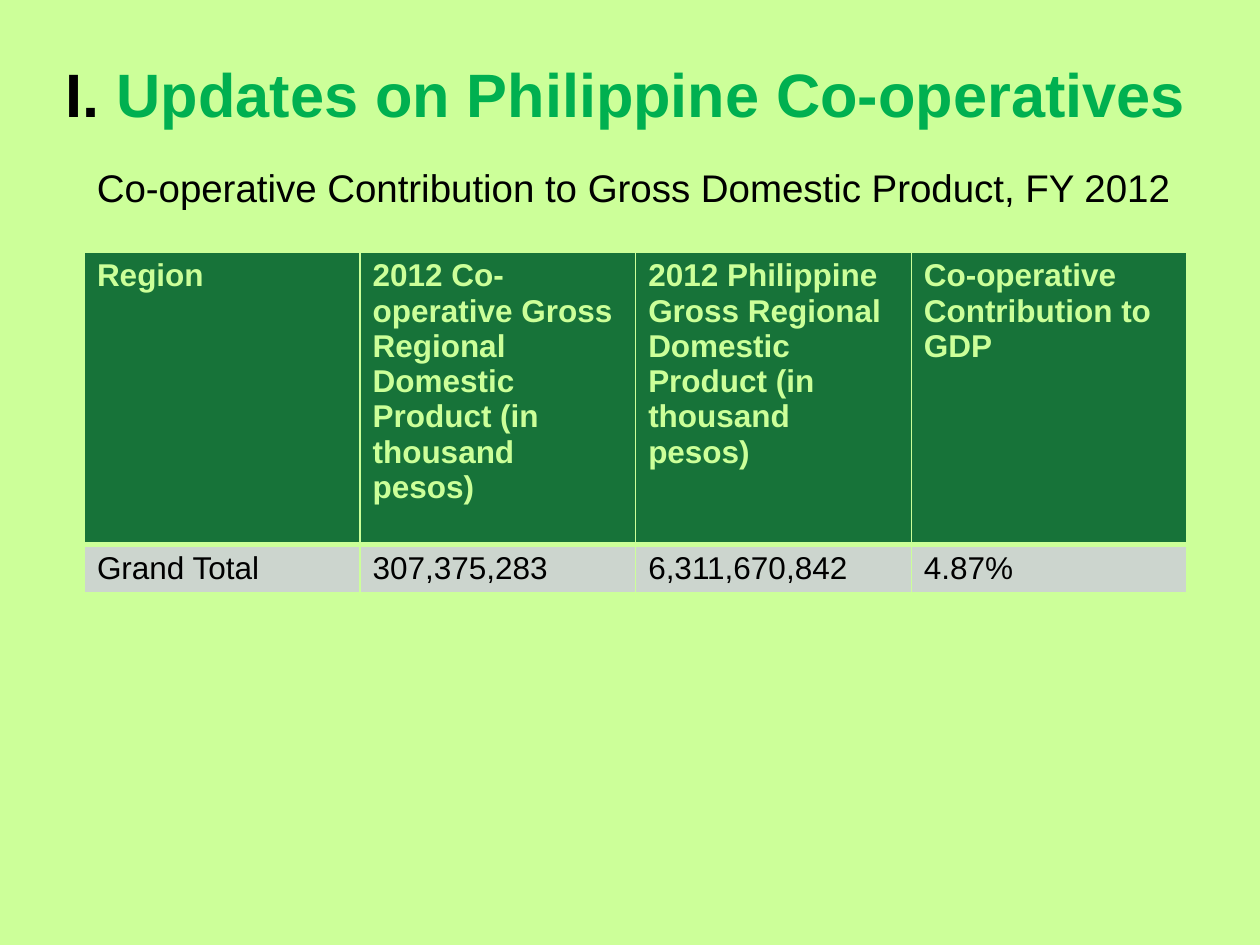
from dataclasses import dataclass

from lxml.etree import SubElement
from pptx import Presentation
from pptx.dml.color import RGBColor as Rgb
from pptx.enum.text import MSO_ANCHOR as Anchor, MSO_AUTO_SIZE as Fit, PP_ALIGN as Align
from pptx.oxml.ns import qn
from pptx.util import Inches, Pt


@dataclass(frozen=True)
class Theme:
    font: str = "Arial"
    paper: str = "CCFF99"
    ink: str = "000000"
    accent: str = "00B050"
    header: str = "177339"
    band: str = "CCD5CE"
    title_size: int = 35
    subtitle_size: int = 22
    table_size: int = 18
    rule: int = 1
    header_rule: int = 3


THEME = Theme()
WIDTH, HEIGHT = Inches(10), Inches(7.5)
TITLE_BOX = (0.42, 0.25, 9.17, 0.83)
SUBTITLE_BOX = (0.67, 1.25, 8.92, 2.5)
TABLE_BOX = (0.67, 2, 8.75, 2.7)
HEADER_SHARE = 0.86

TITLE = [("I. ", THEME.ink), ("Updates on Philippine Co-operatives", THEME.accent)]
SUBTITLE = "Co-operative Contribution to Gross Domestic Product, FY 2012"
CONTRIBUTION = [
    [
        "Region",
        "2012 Co-operative Gross Regional Domestic Product (in thousand pesos)",
        "2012 Philippine Gross Regional Domestic Product (in thousand pesos)",
        "Co-operative Contribution to GDP",
    ],
    ["Grand Total", "307,375,283", "6,311,670,842", "4.87%"],
]


def apply(target, formats):
    for name, value in formats.items():
        setattr(target, name, value)


def write(paragraph, wording, size, color, bold=False):
    run = paragraph.add_run()
    run.text = wording
    apply(run.font, {"name": THEME.font, "size": Pt(size), "bold": bold})
    run.font.color.rgb = Rgb.from_string(color)


def place_title(slide, box):
    heading = slide.shapes.title
    apply(heading, dict(zip(("left", "top", "width", "height"), map(Inches, box))))
    frame = heading.text_frame
    apply(frame, {"word_wrap": True, "auto_size": Fit.NONE, "vertical_anchor": Anchor.BOTTOM})
    line = frame.paragraphs[0]
    line.alignment = Align.LEFT
    for wording, color in TITLE:
        write(line, wording, THEME.title_size, color, bold=True)


def place_subtitle(slide, box):
    frame = slide.shapes.add_textbox(*map(Inches, box)).text_frame
    apply(frame, {"word_wrap": True, "auto_size": Fit.NONE, "vertical_anchor": Anchor.TOP})
    write(frame.paragraphs[0], SUBTITLE, THEME.subtitle_size, THEME.ink)


def draw_borders(cell, top, bottom):
    properties = cell._tc.get_or_add_tcPr()
    edges = {"lnL": THEME.rule, "lnR": THEME.rule, "lnT": top, "lnB": bottom}
    for edge, weight in edges.items():
        border = SubElement(properties, qn(f"a:{edge}"), w=str(Pt(weight)))
        paint = SubElement(border, qn("a:solidFill"))
        SubElement(paint, qn("a:srgbClr"), val=THEME.paper)


def place_contribution_table(slide, box):
    left, top, width, height = map(Inches, box)
    columns = len(CONTRIBUTION[0])
    table = slide.shapes.add_table(len(CONTRIBUTION), columns, left, top, width, height).table
    for column in table.columns:
        column.width = width // columns
    for row, share in zip(table.rows, (HEADER_SHARE, 1 - HEADER_SHARE)):
        row.height = int(height * share)
    looks = [
        (THEME.header, THEME.paper, True, THEME.rule, THEME.header_rule),
        (THEME.band, THEME.ink, False, THEME.header_rule, THEME.rule),
    ]
    for row, entries, (fill, ink, bold, upper, lower) in zip(table.rows, CONTRIBUTION, looks):
        for cell, entry in zip(row.cells, entries):
            draw_borders(cell, upper, lower)
            cell.fill.solid()
            cell.fill.fore_color.rgb = Rgb.from_string(fill)
            write(cell.text_frame.paragraphs[0], entry, THEME.table_size, ink, bold)


def main():
    deck = Presentation()
    apply(deck, {"slide_width": WIDTH, "slide_height": HEIGHT})
    slide = deck.slides.add_slide(deck.slide_layouts.get_by_name("Title Only"))
    slide.background.fill.solid()
    slide.background.fill.fore_color.rgb = Rgb.from_string(THEME.paper)
    place_title(slide, TITLE_BOX)
    place_subtitle(slide, SUBTITLE_BOX)
    place_contribution_table(slide, TABLE_BOX)
    deck.save("out.pptx")


if __name__ == "__main__":
    main()
